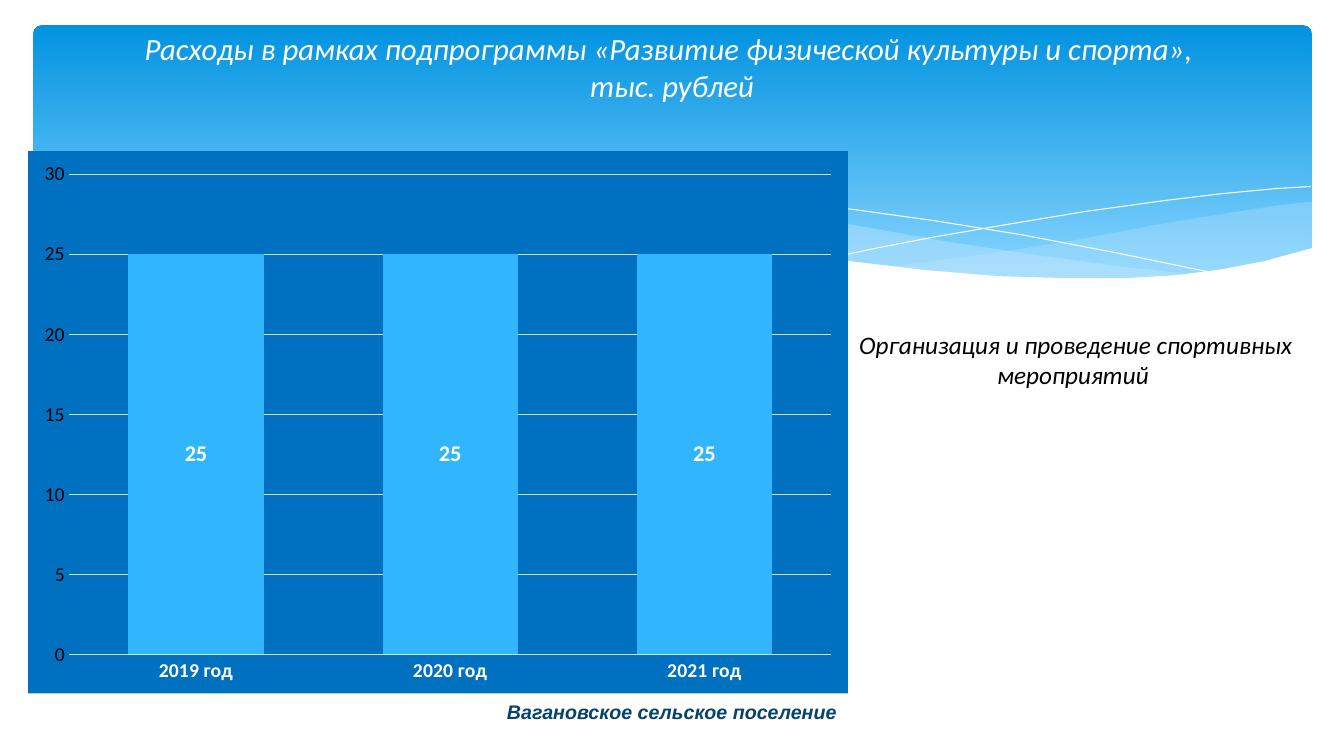
from lxml.etree import SubElement
from pptx import Presentation
from pptx.chart.data import CategoryChartData
from pptx.dml.color import RGBColor
from pptx.enum.chart import XL_CHART_TYPE as ChartType, XL_TICK_MARK as TickMark
from pptx.enum.shapes import MSO_SHAPE as Preset
from pptx.enum.text import MSO_ANCHOR as Anchor, PP_ALIGN as Align
from pptx.oxml import parse_xml
from pptx.oxml.ns import nsdecls, qn
from pptx.util import Pt

PX = 9144
WHITE = RGBColor(0xFF, 0xFF, 0xFF)
BLACK = RGBColor(0x00, 0x00, 0x00)
SKY_TOP = RGBColor(0x02, 0x93, 0xE0)
SKY_BOTTOM = RGBColor(0x83, 0xD3, 0xFE)
MIST = RGBColor(0xC6, 0xE7, 0xFC)
NAVY = RGBColor(0x06, 0x43, 0x6B)
PANEL = RGBColor(0x00, 0x70, 0xC0)
COLUMN = RGBColor(0x31, 0xB6, 0xFD)
GRID = RGBColor(0xD9, 0xD9, 0xD9)

RIGHT_SWELL = [
    (1269, 16), (1234, 20), (1177, 29), (1116, 39), (1042, 53), (974, 64),
    (910, 73), (851, 81), (890, 85), (945, 90), (994, 93), (1054, 94),
    (1107, 92), (1155, 88), (1207, 79), (1253, 68), (1270, 63), (1270, 16)]
LONG_SWELL = [
    (1159, 89), (1085, 81), (1003, 70), (910, 56), (808, 38), (747, 27),
    (690, 19), (621, 10), (558, 5), (501, 2), (451, 1), (406, 3), (351, 7),
    (425, 15), (508, 27), (568, 38), (675, 56), (771, 71), (856, 82),
    (932, 90), (999, 93), (1059, 94), (1112, 93)]
FALLING_LINE = [
    (381, 11), (427, 6), (504, 3), (569, 4), (649, 8), (744, 16),
    (817, 24), (896, 35), (983, 49), (1077, 67), (1179, 88)]
RISING_LINE = [
    (787, 73), (839, 62), (896, 51), (966, 39), (1044, 26),
    (1124, 15), (1182, 8), (1236, 3), (1269, 1)]
WHITE_SHORE = [
    (1271, 62), (1223, 75), (1182, 83), (1136, 89), (1085, 92), (1027, 92),
    (961, 90), (887, 84), (803, 74), (709, 61), (603, 43), (527, 29),
    (455, 18), (390, 10), (330, 4), (275, 1), (204, 0), (145, 2), (96, 7),
    (58, 13), (30, 19), (0, 29), (0, 145), (1272, 145)]


def px(*lengths):
    return [length * PX for length in lengths]


def style_font(font, size, color, name="Calibri", bold=False, italic=False):
    font.name = name
    font.size = Pt(size)
    font.bold = bold
    font.italic = italic
    font.color.rgb = color


def add_text(page, box, text, anchor=Anchor.TOP, wrap=True, **style):
    frame = page.shapes.add_textbox(*px(*box)).text_frame
    frame.word_wrap = wrap
    frame.vertical_anchor = anchor
    para = frame.paragraphs[0]
    para.alignment = Align.CENTER
    for index, line in enumerate(text.split("\n")):
        if index:
            para.add_line_break()
        span = para.add_run()
        span.text = line
        style_font(span.font, **style)


def add_curve(page, origin, points, fill=None, opacity=100):
    builder = page.shapes.build_freeform(*points[0], scale=PX)
    builder.add_line_segments(points[1:], close=fill is not None)
    curve = builder.convert_to_shape(*px(*origin))
    curve.shadow.inherit = False
    if fill is None:
        curve.fill.background()
        curve.line.color.rgb = WHITE
        curve.line.width = Pt(0)
        return
    curve.line.fill.background()
    curve.fill.solid()
    curve.fill.fore_color.rgb = fill
    if opacity < 100:
        color = curve.element.spPr.find(qn("a:solidFill"))[0]
        SubElement(color, qn("a:alpha"), val=str(opacity * 1000))


def add_sky(page, box):
    sky = page.shapes.add_shape(Preset.ROUNDED_RECTANGLE, *px(*box))
    sky.adjustments[0] = 0.03
    sky.shadow.inherit = False
    sky.line.fill.background()
    sky.fill.gradient()
    sky.fill.gradient_angle = 270
    stops = zip(sky.fill.gradient_stops, (SKY_TOP, SKY_BOTTOM), (0, 0.9))
    for stop, color, position in stops:
        stop.color.rgb = color
        stop.position = position


def add_waves(page, box):
    origin = box[:2]
    add_curve(page, origin, RIGHT_SWELL, MIST, 29)
    add_curve(page, origin, LONG_SWELL, MIST, 40)
    add_curve(page, origin, FALLING_LINE)
    add_curve(page, origin, RISING_LINE)
    add_curve(page, origin, WHITE_SHORE, WHITE)


def style_axis(axis, color, bold=False):
    axis.major_tick_mark = axis.minor_tick_mark = TickMark.NONE
    axis.format.line.fill.background()
    style_font(axis.tick_labels.font, 14, color, bold=bold)


def add_spending_chart(page, box):
    data = CategoryChartData()
    data.categories = ["2019 год", "2020 год", "2021 год"]
    data.add_series("Series 1", [25, 25, 25])
    chart = page.shapes.add_chart(ChartType.COLUMN_STACKED, *px(*box), data).chart
    chart.has_title = False
    chart.has_legend = False
    style_font(chart.font, 14, BLACK)
    chart.element.find(qn("c:chart")).addnext(parse_xml(
        f'<c:spPr {nsdecls("c", "a")}><a:solidFill><a:srgbClr val="{PANEL}"/>'
        '</a:solidFill><a:ln><a:noFill/></a:ln></c:spPr>'))

    style_axis(chart.category_axis, WHITE, bold=True)
    values = chart.value_axis
    style_axis(values, BLACK)
    values.minimum_scale = 0
    values.maximum_scale = 30
    values.major_unit = 5
    values.has_major_gridlines = True
    values.major_gridlines.format.line.color.rgb = GRID
    values.major_gridlines.format.line.width = Pt(0.75)

    plot = chart.plots[0]
    plot.gap_width = 88
    plot.overlap = 100
    plot.vary_by_categories = False
    series = plot.series[0]
    series.format.fill.solid()
    series.format.fill.fore_color.rgb = COLUMN
    labels = series.data_labels
    labels.show_value = True
    style_font(labels.font, 16, WHITE, bold=True)


def main():
    deck = Presentation()
    deck.slide_width, deck.slide_height = px(1333, 750)
    page = deck.slides.add_slide(deck.slide_layouts[6])
    add_sky(page, (33, 25, 1268, 270))
    add_waves(page, (31, 184, 1272, 145))
    add_text(page, (0, 0, 1333, 132),
             "Расходы в рамках подпрограммы «Развитие физической культуры и спорта», \n"
             "тыс. рублей",
             anchor=Anchor.MIDDLE, size=22, color=WHITE, italic=True)
    add_text(page, (492, 689, 349, 34), "Вагановское сельское поселение",
             wrap=False, size=14, color=NAVY, name="Arial", bold=True, italic=True)
    add_spending_chart(page, (28, 150, 813, 538))
    add_text(page, (826, 322, 482, 71),
             "Организация и проведение спортивных мероприятий ",
             size=18, color=BLACK, italic=True)
    deck.save("out.pptx")


if __name__ == "__main__":
    main()
